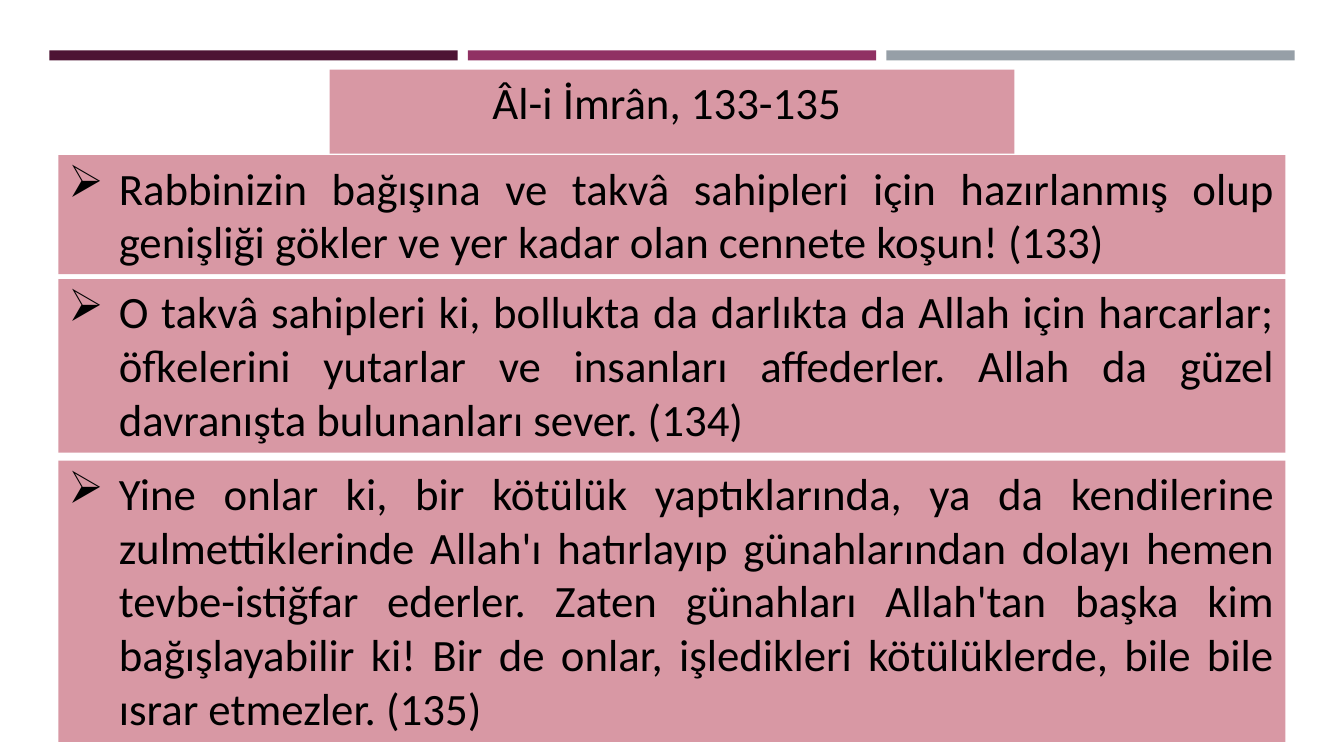
from lxml import etree
from pptx import Presentation
from pptx.dml.color import RGBColor
from pptx.enum import shapes, text
from pptx.oxml import ns
from pptx.util import Inches, Pt

# Content
TITLE = "Âl-i İmrân, 133-135 "
VERSES = [  # top, height, text
    (1.54, 1.18, "Rabbinizin bağışına ve takvâ sahipleri için hazırlanmış olup "
     "genişliği gökler ve yer kadar olan cennete koşun! (133) "),
    (2.77, 1.72, "O takvâ sahipleri ki, bollukta da darlıkta da Allah için harcarlar; "
     "öfkelerini yutarlar ve insanları affederler. Allah da güzel "
     "davranışta bulunanları sever. (134) "),
    (4.57, 2.79, "Yine onlar ki, bir kötülük yaptıklarında, ya da kendilerine "
     "zulmettiklerinde Allah'ı hatırlayıp günahlarından dolayı hemen "
     "tevbe-istiğfar ederler. Zaten günahları Allah'tan başka kim "
     "bağışlayabilir ki! Bir de onlar, işledikleri kötülüklerde, bile bile "
     "ısrar etmezler. (135)"),
]
BAR_COLORS = ["4D1434", "903163", "969FA7"]
PANEL_COLOR = "B2324B"
BAR_LEFT, BAR_TOP, BAR_W, BAR_H, BAR_STEP = 0.49, 0.5, 4.05, 0.1, 4.15
VERSE_LEFT, VERSE_W = 0.58, 12.17


def fill(sp, color, alpha=None):
    sp.fill.solid()
    sp.fill.fore_color.rgb = RGBColor.from_string(color)
    if alpha is not None:
        clr = sp.fill._xPr.find(".//" + ns.qn("a:srgbClr"))
        etree.SubElement(clr, ns.qn("a:alpha"), val=str(alpha * 1000))


def write_panel(sp, words, align):
    """Tint a text panel and set its single paragraph."""
    fill(sp, PANEL_COLOR, 50)
    tf = sp.text_frame
    tf.text = words
    tf.word_wrap = True
    tf.auto_size = text.MSO_AUTO_SIZE.SHAPE_TO_FIT_TEXT
    tf.vertical_anchor = text.MSO_ANCHOR.TOP
    p = tf.paragraphs[0]
    p.alignment = align
    font = p.runs[0].font
    font.name, font.size = "Calibri", Pt(32)
    font.color.rgb = RGBColor.from_string("000000")
    return p


def add_bullet(p, char):
    pPr = p._p.get_or_add_pPr()
    pPr.set("marL", str(Inches(0.5)))
    pPr.set("indent", str(Inches(-0.5)))
    etree.SubElement(pPr, ns.qn("a:buChar"), char=char)


prs = Presentation()
prs.slide_width, prs.slide_height = Inches(13.33), Inches(7.5)
s = prs.slides.add_slide(prs.slide_layouts[5])

# Top bars
for i, color in enumerate(BAR_COLORS):
    bar = s.shapes.add_shape(
        shapes.MSO_SHAPE.RECTANGLE, Inches(BAR_LEFT + i * BAR_STEP),
        Inches(BAR_TOP), Inches(BAR_W), Inches(BAR_H))
    bar.shadow.inherit = False
    bar.line.fill.background()
    fill(bar, color)

# Title
title = s.shapes.title
title.left, title.top = Inches(3.27), Inches(0.69)
title.width, title.height = Inches(6.79), Inches(0.64)
write_panel(title, TITLE, text.PP_ALIGN.CENTER)

# Verses
for top, height, words in VERSES:
    box = s.shapes.add_textbox(Inches(VERSE_LEFT), Inches(top),
                               Inches(VERSE_W), Inches(height))
    add_bullet(write_panel(box, words, text.PP_ALIGN.JUSTIFY), "➢")

prs.save("out.pptx")
